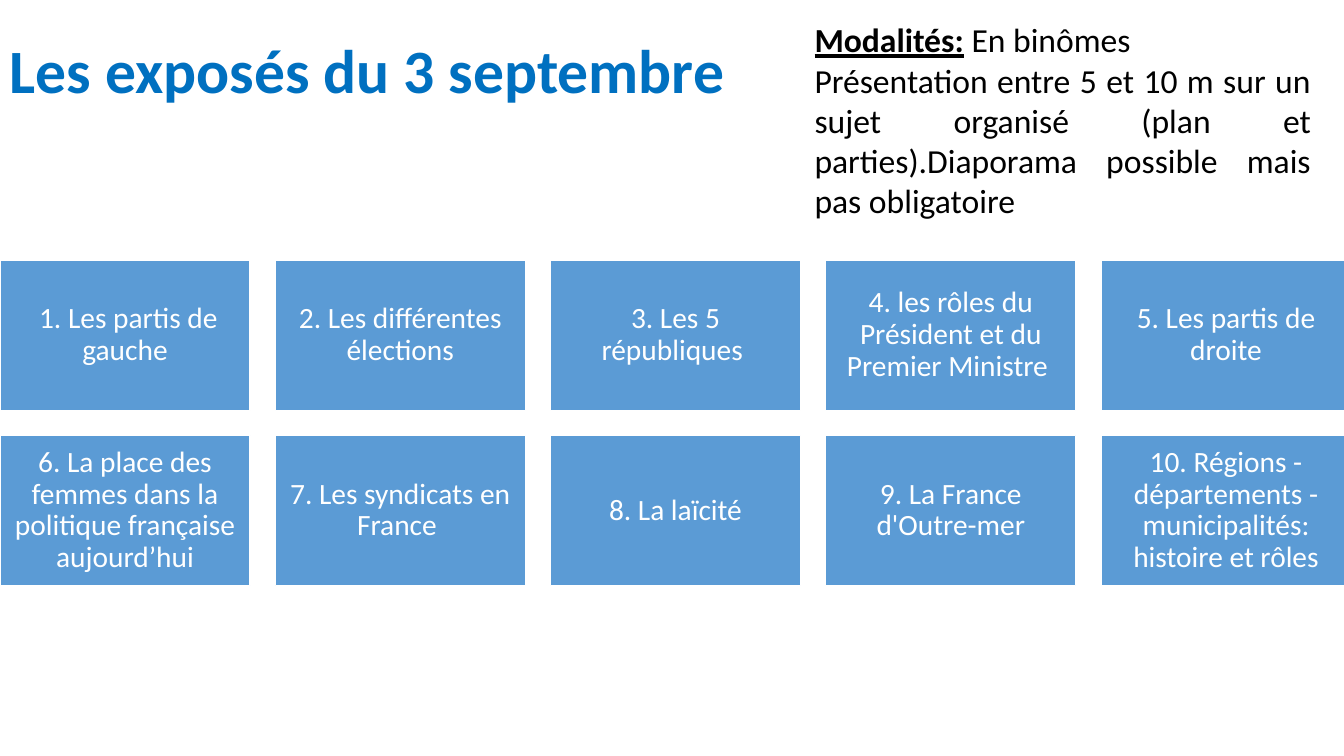
from dataclasses import dataclass

from pptx import Presentation
from pptx import util as u
from pptx.dml.color import RGBColor
from pptx.enum import shapes, text


@dataclass(frozen=True)
class Theme:
    """Colours, font and type sizes of the slide."""
    font: str = "Calibri"
    title: str = "0070C0"
    card: str = "5B9BD5"
    light: str = "FFFFFF"
    dark: str = "000000"
    title_size: int = 44
    body_size: int = 24
    card_size: int = 21


THEME = Theme()
WIDTH, HEIGHT = 13.33, 7.5
COLUMNS = 5
GAP = 0.25
CARD_W, CARD_H = 2.48, 1.49
TOPICS = [
    " 1. Les partis de gauche",
    "2. Les différentes élections",
    "3. Les 5 républiques ",
    "4. les rôles du Président et du Premier Ministre ",
    "5. Les partis de droite",
    "6. La place des femmes dans la politique française aujourd’hui",
    "7. Les syndicats en France ",
    "8. La laïcité",
    "9. La France d'Outre-mer",
    "10. Régions - départements - municipalités: histoire et rôles",
]


def add_run(p, words, size, color, bold=False, underline=False):
    """Append formatted words to a paragraph."""
    r = p.add_run()
    r.text = words
    r.font.name = THEME.font
    r.font.size = u.Pt(size)
    r.font.color.rgb = RGBColor.from_string(color)
    r.font.bold = bold
    r.font.underline = underline


def add_text_box(s, box):
    """Add a wrapping text box and return its text frame."""
    tf = s.shapes.add_textbox(*map(u.Inches, box)).text_frame
    tf.word_wrap = True
    return tf


def add_title(s, box, words):
    """Place the slide title in its box."""
    tf = add_text_box(s, box)
    tf.vertical_anchor = text.MSO_ANCHOR.MIDDLE
    p = tf.paragraphs[0]
    p.line_spacing = 0.9
    add_run(p, words, THEME.title_size, THEME.title, bold=True)


def add_instructions(s, box, label, lead, detail):
    """Place the justified instructions with their underlined label."""
    tf = add_text_box(s, box)
    tf.auto_size = text.MSO_AUTO_SIZE.SHAPE_TO_FIT_TEXT
    first, second = tf.paragraphs[0], tf.add_paragraph()
    first.alignment = second.alignment = text.PP_ALIGN.JUSTIFY
    add_run(first, label, THEME.body_size, THEME.dark, bold=True, underline=True)
    add_run(first, lead, THEME.body_size, THEME.dark)
    add_run(second, detail, THEME.body_size, THEME.dark)


def add_card(s, box, words):
    """Draw one topic card in its box."""
    sp = s.shapes.add_shape(shapes.MSO_SHAPE.RECTANGLE, *map(u.Inches, box))
    sp.shadow.inherit = False
    sp.fill.solid()
    sp.fill.fore_color.rgb = RGBColor.from_string(THEME.card)
    sp.line.color.rgb = RGBColor.from_string(THEME.light)
    sp.line.width = u.Pt(1)
    tf = sp.text_frame
    tf.word_wrap = True
    tf.vertical_anchor = text.MSO_ANCHOR.MIDDLE
    tf.margin_left = tf.margin_right = u.Inches(0.09)
    tf.margin_top = tf.margin_bottom = u.Inches(0.09)
    p = tf.paragraphs[0]
    p.alignment = text.PP_ALIGN.CENTER
    p.line_spacing = 0.9
    add_run(p, words, THEME.card_size, THEME.light)


def add_topic_grid(s, left, top, topics):
    """Lay the topic cards out row by row from a corner."""
    for i, words in enumerate(topics):
        row, column = divmod(i, COLUMNS)
        x = left + column * (CARD_W + GAP)
        y = top + row * (CARD_H + GAP)
        add_card(s, (x, y, CARD_W, CARD_H), words)


def main():
    """Build and save the slide."""
    prs = Presentation()
    prs.slide_width, prs.slide_height = u.Inches(WIDTH), u.Inches(HEIGHT)
    s = prs.slides.add_slide(prs.slide_layouts[6])
    add_title(s, (0, 0, 11.5, 1.45), "Les exposés du 3 septembre")
    add_topic_grid(s, 0, 2.58, TOPICS)
    add_instructions(
        s, (7.98, 0.14, 5.12, 2.12), "Modalités:", " En binômes",
        "Présentation entre 5 et 10 m sur un sujet organisé (plan et parties)."
        "Diaporama possible mais pas obligatoire")
    prs.save("out.pptx")


if __name__ == "__main__":
    main()
